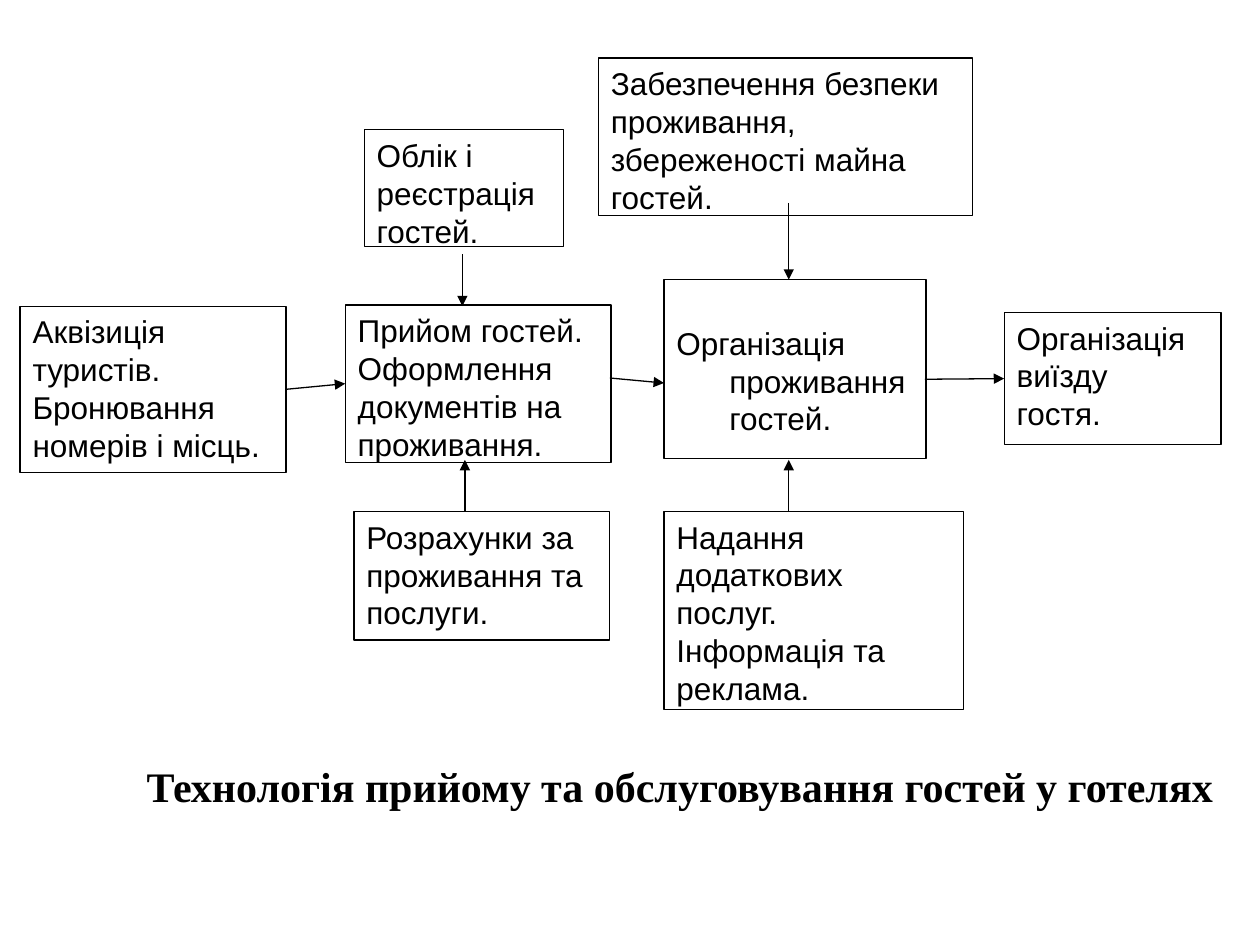
from lxml import etree
from pptx import Presentation
from pptx import util as u
from pptx.dml.color import RGBColor
from pptx.enum import shapes, text
from pptx.oxml.ns import qn

COLORS = {"ink": "000000", "paper": "FFFFFF"}
BODY_FONT, TITLE_FONT = "Arial", "Times New Roman"
TOP, LEFT, BOTTOM, RIGHT = range(4)

# name: (left, top, width, height, paragraphs)
BOXES = {
    "booking": (0.16, 2.43, 2.11, 1.32,
                ["Аквізиція", "туристів.", "Бронювання", "номерів і місць."]),
    "reception": (2.74, 2.42, 2.11, 1.25,
                  ["Прийом гостей.", "Оформлення", "документів на", "проживання."]),
    "registration": (2.89, 1.03, 1.58, 0.93, ["Облік і реєстрація", "гостей."]),
    "payment": (2.81, 4.06, 2.03, 1.02,
                ["Розрахунки за", "проживання та", "послуги."]),
    "stay": (5.27, 2.22, 2.08, 1.42, ["Організація", "проживання", "гостей."]),
    "security": (4.75, 0.46, 2.97, 1.25,
                 ["Забезпечення безпеки проживання, збереженості майна", "гостей."]),
    "extras": (5.27, 4.06, 2.38, 1.57,
               ["Надання", "додаткових", "послуг.", "Інформація та реклама."]),
    "departure": (7.97, 2.48, 1.72, 1.05, ["Організація", "виїзду", "гостя."]),
}

# start x, start y, end x, end y, joined start, joined end
ARROWS = [
    (2.27, 3.12, 2.74, 3.08, ("booking", RIGHT), ("reception", LEFT)),
    (4.84, 3.0, 5.27, 3.04, None, None),
    (7.34, 3.01, 7.94, 3.01, None, ("departure", LEFT)),
    (3.69, 4.06, 3.69, 3.65, None, None),
    (6.26, 1.61, 6.26, 2.22, None, None),
    (6.26, 4.06, 6.26, 3.65, None, None),
    (3.67, 2.02, 3.67, 2.43, None, None),
]


def rgb(name):
    return RGBColor.from_string(COLORS[name])


def style_text(tf, font, size, bold=False):
    for p in tf.paragraphs:
        for r in p.runs:
            r.font.name, r.font.size, r.font.bold = font, u.Pt(size), bold
            r.font.color.rgb = rgb("ink")


def style_line(line):
    line.color.rgb = rgb("ink")
    line.width = u.Pt(0.75)


def add_box(s, left, top, width, height, lines):
    sp = s.shapes.add_shape(shapes.MSO_SHAPE.RECTANGLE, *map(u.Inches, (left, top, width, height)))
    sp.shadow.inherit = False
    sp.fill.solid()
    sp.fill.fore_color.rgb = rgb("paper")
    style_line(sp.line)
    tf = sp.text_frame
    tf.word_wrap = True
    tf.vertical_anchor = text.MSO_ANCHOR.TOP
    tf.text = "\n".join(lines)
    for p in tf.paragraphs:
        p.alignment = text.PP_ALIGN.LEFT
    style_text(tf, BODY_FONT, 18)
    return sp


def add_arrow(s, boxes, x1, y1, x2, y2, start, end):
    c = s.shapes.add_connector(shapes.MSO_CONNECTOR.STRAIGHT, *map(u.Inches, (x1, y1, x2, y2)))
    if start:
        c.begin_connect(boxes[start[0]], start[1])
    if end:
        c.end_connect(boxes[end[0]], end[1])
    style_line(c.line)
    etree.SubElement(c.line._get_or_add_ln(), qn("a:tailEnd"), type="triangle")
    etree.SubElement(c._element.spPr, qn("a:effectLst"))


def add_flowchart(s):
    boxes = {name: add_box(s, *box) for name, box in BOXES.items()}

    # The stay box starts one line lower, and its later lines are indented
    tf = boxes["stay"].text_frame
    tf.margin_top = u.Inches(0.35)
    for p in tf.paragraphs[1:]:
        p._p.get_or_add_pPr().set("marL", str(u.Inches(0.42)))

    for arrow in ARROWS:
        add_arrow(s, boxes, *arrow)


def add_title(s, left, top, width, height):
    tf = s.shapes.add_textbox(*map(u.Inches, (left, top, width, height))).text_frame
    tf.word_wrap = True
    tf.auto_size = text.MSO_AUTO_SIZE.SHAPE_TO_FIT_TEXT
    tf.text = "Технологія прийому та обслуговування гостей у готелях"
    tf.paragraphs[0].alignment = text.PP_ALIGN.CENTER
    style_text(tf, TITLE_FONT, 24, bold=True)


def main():
    prs = Presentation()
    prs.slide_width, prs.slide_height = u.Inches(10), u.Inches(7.5)
    s = prs.slides.add_slide(prs.slide_layouts[6])
    add_flowchart(s)
    add_title(s, 0.51, 5.99, 9.77, 0.51)
    prs.save("out.pptx")


if __name__ == "__main__":
    main()
